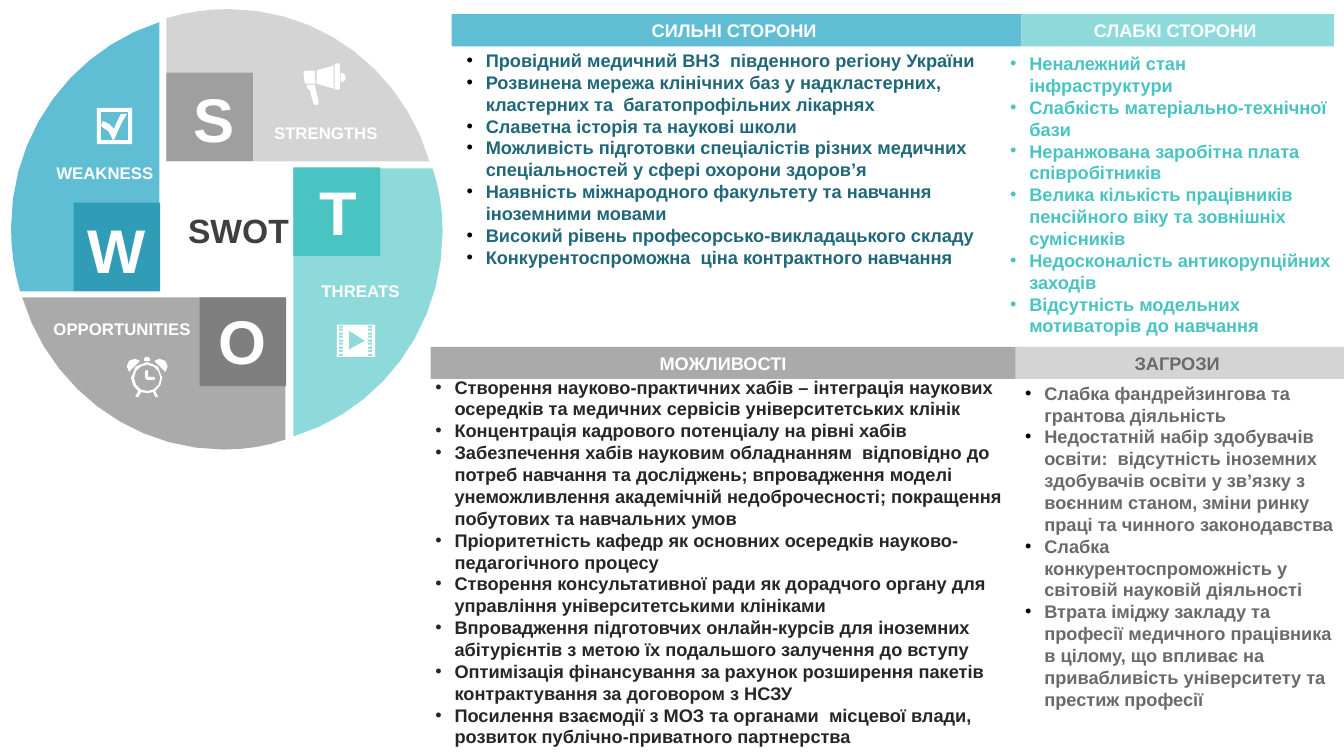
import math
from pptx import Presentation
from pptx.dml.color import RGBColor
from pptx.enum.shapes import MSO_SHAPE
from pptx.enum.text import MSO_ANCHOR, MSO_AUTO_SIZE, PP_ALIGN
from pptx.oxml.ns import qn
from pptx.util import Pt
from lxml import etree

RECT = MSO_SHAPE.RECTANGLE
LEFT, MID, RIGHT = PP_ALIGN.LEFT, PP_ALIGN.CENTER, PP_ALIGN.RIGHT
MIDDLE, GROW = MSO_ANCHOR.MIDDLE, MSO_AUTO_SIZE.SHAPE_TO_FIT_TEXT
FONT = "Arial"
WHITE, SKY, AQUA = "FFFFFF", "60BED4", "8EDADA"
TEAL, GREY, PALE = "4AC3C3", "AAAAAA", "D4D4D4"


def px(n):
    """100 px to the inch."""
    return round(n * 9144)


def rgb(code):
    return RGBColor.from_string(code)


def paint(shape, fill):
    shape.shadow.inherit = False
    shape.fill.solid()
    shape.fill.fore_color.rgb = rgb(fill)
    shape.line.fill.background()
    return shape


def block(slide, box, fill):
    return paint(slide.shapes.add_shape(RECT, *map(px, box)), fill)


def write(shape, lines, size, ink, align=LEFT):
    frame = shape.text_frame
    frame.word_wrap = True
    frame.auto_size = GROW
    frame.text = "\n".join(lines)
    for para in frame.paragraphs:
        para.alignment = align
        font = para.runs[0].font
        font.name, font.size, font.bold = FONT, Pt(size), True
        font.color.rgb = rgb(ink)
    return frame


def label(slide, box, lines, size, ink, align=LEFT):
    return write(slide.shapes.add_textbox(*map(px, box)), lines, size, ink, align)


def dots(frame, color):
    for para in frame.paragraphs:
        props = para._p.get_or_add_pPr()
        props.set("marL", str(px(19)))
        props.set("indent", str(px(-19)))
        tint = etree.SubElement(props, qn("a:buClr"))
        etree.SubElement(tint, qn("a:srgbClr"), val=color)
        etree.SubElement(props, qn("a:buFont"), typeface=FONT)
        etree.SubElement(props, qn("a:buChar"), char="•")


# Outlines: a pair is a corner, six numbers are a cubic curve
def flat(steps):
    points = []
    for step in steps:
        if len(step) == 2:
            points.append(step)
            continue
        knots = [points[-1], step[:2], step[2:4], step[4:]]
        count = 2 + int(math.dist(knots[0], knots[3]) // 28)
        for i in range(1, count + 1):
            t = i / count
            mix = [math.comb(3, k) * t**k * (1 - t)**(3 - k) for k in range(4)]
            points.append(tuple(sum(m * p[axis] for m, p in zip(mix, knots)) for axis in (0, 1)))
    return points


def trace(slide, left, top, fill, *loops):
    pen = None
    for loop in loops:
        spots = [(px(left + x), px(top + y)) for x, y in flat(loop)]
        if pen is None:
            pen = slide.shapes.build_freeform(*spots[0], scale=1.0)
        else:
            pen.move_to(*spots[0])
        pen.add_line_segments(spots[1:], close=True)
    paint(pen.convert_to_shape(), fill)


def pane(x, y, wide, high):
    return [(x, y), (x + wide, y), (x + wide, y + high), (x, y + high)]


# Icons
def clock(slide, left, top):
    turns = [math.tau * i / 12 for i in range(12)]
    face = [(20 + 13 * math.cos(a), 21 + 13 * math.sin(a)) for a in turns]
    hands = [(20, 13), (21, 14), (21, 20), (27, 20), (28, 21), (27, 23), (20, 23), (18, 21), (18, 14)]
    case = [(20, 5), (28, 5, 35, 12, 35, 21), (35, 26, 32, 31, 28, 34), (31, 40), (28, 40),
            (26, 35), (20, 36), (14, 35), (11, 40), (8, 40),
            (11, 34), (7, 31, 4, 26, 4, 21), (4, 12, 11, 5, 20, 5)]
    bell = [(8, 2), (13, 4), (2, 15), (-1, 12, -1, 7, 2, 4), (8, 2)]
    twin = [(40 - x, y) for x, y in flat(bell)]
    knob = [(18, 0), (21, 0), (23, 2), (23, 4), (17, 4), (17, 2)]
    trace(slide, left, top, WHITE, hands, face, case, bell, twin, knob)


def check(slide, left, top):
    tick = [(4, 4), (4, 32), (16, 32), (14, 27, 11, 19, 4, 18), (6, 13), (12, 15, 14, 17, 17, 21),
            (19, 15, 21, 12, 24, 6), (30, 6), (25, 13, 21, 23, 17, 32), (31, 32), (31, 4)]
    trace(slide, left, top, WHITE, tick, pane(0, 0, 35, 36))


def horn(slide, left, top):
    grip = [(11, 21), (12, 25), (15, 38), (14, 41), (12, 41), (10, 40), (6, 26), (4, 25), (3, 21)]
    cap = [(37, 9), (40, 9, 42, 11, 42, 14), (42, 16, 40, 19, 37, 19)]
    body = [(2, 7), (11, 7), (12, 20), (2, 20), (1, 18), (0, 9)]
    cone = [(30, 2), (30, 25), (13, 20), (13, 7)]
    rim = [(32, 0), (35, 0), (36, 1), (36, 25), (35, 26), (32, 26), (31, 25), (31, 1)]
    trace(slide, left, top, WHITE, grip, cap, body, cone, rim)


def film(slide, left, top):
    holes = [pane(x, 1 + 7 * i // 2, 4, 2) for i in range(9) for x in (2, 31)]
    play = [(12, 6), (12, 25), (28, 16)]
    trace(slide, left, top, WHITE, *holes, play, pane(0, 0, 38, 32))


# Round diagram
def wheel(slide, left, top):
    parts = [
        (GREY, [(12, 285), (273, 285), (273, 426), (254, 433, 233, 436, 212, 436),
                (118, 436, 38, 372, 12, 285)]),
        (AQUA, [(281, 423), (281, 157), (419, 157), (426, 177, 429, 198, 429, 220),
                (429, 316, 367, 397, 281, 423)]),
        (PALE, [(416, 150), (155, 150), (155, 8), (175, 2, 195, -1, 217, -1),
                (311, -1, 390, 62, 416, 150)]),
        (SKY, [(148, 12), (148, 279), (10, 279), (4, 259, 1, 238, 1, 216),
               (1, 120, 63, 39, 148, 12)]),
    ]
    for fill, loop in parts:
        trace(slide, left, top, fill, loop)
    tiles = [("W", "319CB5", 63, 191, 67, 195, 78), ("O", "7F7F7F", 188, 285, 193, 286, 76),
             ("S", "9F9F9F", 155, 62, 163, 65, 78), ("T", TEAL, 281, 156, 287, 158, 78)]
    for sign, fill, x, y, dx, dy, wide in tiles:
        block(slide, (left + x, top + y, 86, 88), fill)
        label(slide, (left + dx, top + dy, wide, 84), [sign], 44, WHITE, MID)
    names = [("STRENGTHS", 252, 107, 176, LEFT), ("WEAKNESS", -11, 147, 163, RIGHT),
             ("OPPORTUNITIES", 19, 301, 170, RIGHT), ("THREATS", 299, 264, 155, LEFT)]
    for name, x, y, wide, align in names:
        label(slide, (left + x, top + y, wide, 30), [name], 12, WHITE, align)
    label(slide, (left + 162, top + 193, 129, 50), ["SWOT"], 24, "3F3F3F", MID)
    for icon, x, y in [(clock, 116, 344), (check, 86, 97), (horn, 291, 53), (film, 324, 312)]:
        icon(slide, left + x, top + y)


# Heading bar with its list; body is offset from the bar
def panel(slide, bar, body, title, fill, tone, ink, dot, items):
    left, top, wide = bar
    head = block(slide, (left, top, wide, 32), fill)
    write(head, [title], 13, tone, MID).vertical_anchor = MIDDLE
    x, y, *size = body
    dots(label(slide, (left + x, top + y, *size), items, 13, ink), dot)


PANELS = [
    ((427, 344, 585), (-5, 24, 585, 382), "МОЖЛИВОСТІ ", GREY, WHITE, "262626", "262626", [
        "Створення науково-практичних хабів – інтеграція наукових осередків та медичних сервісів університетських клінік",
        "Концентрація кадрового потенціалу на рівні хабів",
        "Забезпечення хабів науковим обладнанням  відповідно до потреб навчання та досліджень; впровадження моделі унеможливлення академічній недоброчесності; покращення побутових та навчальних умов",
        "Пріоритетність кафедр як основних осередків науково-педагогічного процесу",
        "Створення консультативної ради як дорадчого органу для управління університетськими клініками",
        "Впровадження підготовчих онлайн-курсів для іноземних абітурієнтів з метою їх подальшого залучення до вступу",
        "Оптимізація фінансування за рахунок розширення пакетів контрактування за договором з НСЗУ",
        "Посилення взаємодії з МОЗ та органами  місцевої влади, розвиток публічно-приватного партнерства"]),
    ((448, 14, 565), (5, 30, 525, 273), "СИЛЬНІ СТОРОНИ ", SKY, WHITE, "206879", "000000", [
        "Провідний медичний ВНЗ  південного регіону України",
        "Розвинена мережа клінічних баз у надкластерних, кластерних та  багатопрофільних лікарнях",
        "Славетна історія та наукові школи",
        "Можливість підготовки спеціалістів різних медичних спеціальностей у сфері охорони здоров’я",
        "Наявність міжнародного факультету та навчання  іноземними мовами",
        "Високий рівень професорсько-викладацького складу",
        "Конкурентоспроможна  ціна контрактного навчання"]),
    ((1013, 14, 310), (-21, 33, 341, 295), "СЛАБКІ СТОРОНИ ", AQUA, WHITE, TEAL, TEAL, [
        "Неналежний стан інфраструктури", "Слабкість матеріально-технічної бази",
        "Неранжована заробітна плата співробітників",
        "Велика кількість працівників пенсійного віку та зовнішніх сумісників",
        "Недосконалість антикорупційних заходів", "Відсутність модельних мотиваторів до навчання"]),
    ((1007, 344, 326), (0, 30, 326, 376), "ЗАГРОЗИ ", PALE, "6A6A6A", "6A6A6A", "000000", [
        "Слабка фандрейзингова та грантова діяльність",
        "Недостатній набір здобувачів освіти:  відсутність іноземних здобувачів освіти у зв’язку з воєнним станом, зміни ринку праці та чинного законодавства",
        "Слабка конкурентоспроможність у світовій науковій діяльності",
        "Втрата іміджу закладу та  професії медичного працівника в цілому, що впливає на привабливість університету та престиж професії"]),
]


def main():
    deck = Presentation()
    deck.slide_width, deck.slide_height = px(1333), px(750)
    slide = deck.slides.add_slide(deck.slide_layouts[6])
    wheel(slide, 10, 10)
    for spot in PANELS:
        panel(slide, *spot)
    deck.save("out.pptx")


if __name__ == "__main__":
    main()
